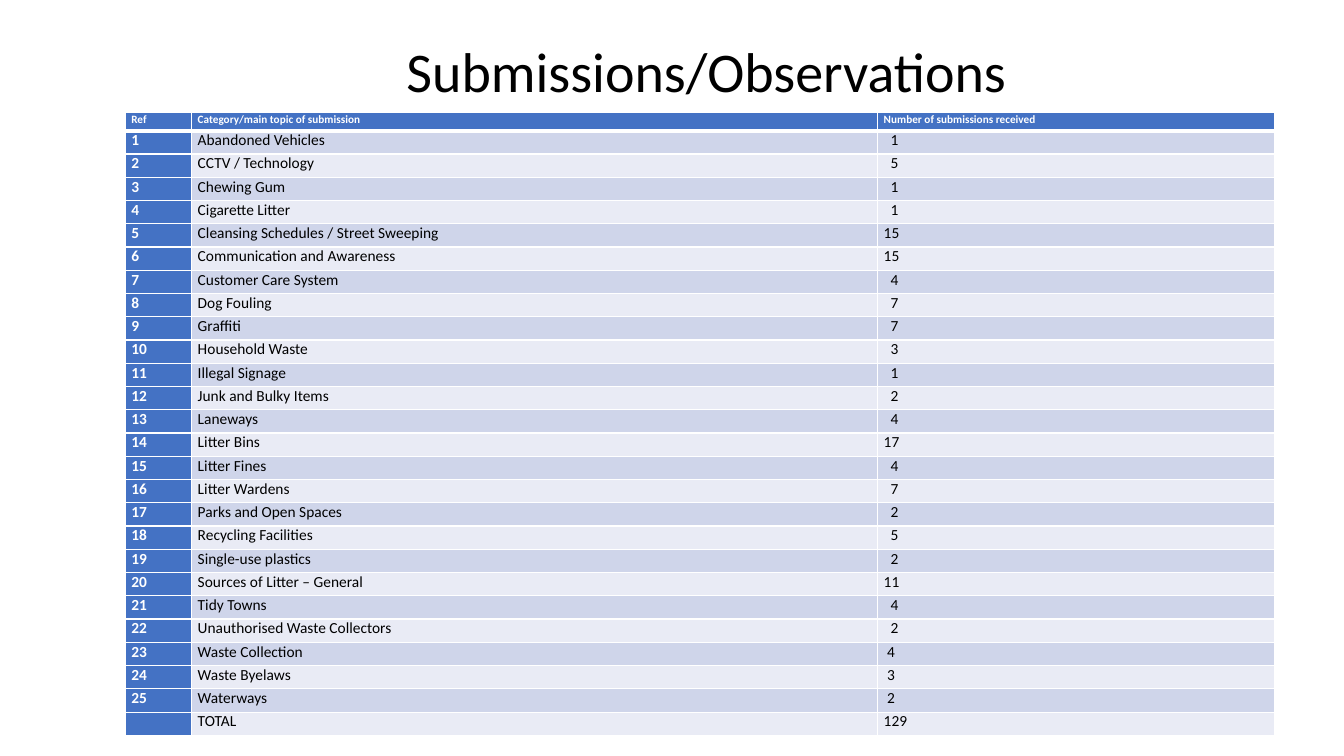
from lxml.etree import SubElement
from pptx import Presentation
from pptx.dml.color import RGBColor
from pptx.enum.text import PP_ALIGN as Align
from pptx.oxml.ns import qn
from pptx.util import Pt

FONT = "Calibri"
BLUE, WHITE, BLACK = "4472C4", "FFFFFF", "000000"
BANDS = ("CFD5EA", "E9EBF5")
HEADINGS = ("Ref", "Category/main topic of submission", "Number of submissions received")
SUBMISSIONS = [
    ("Abandoned Vehicles", 1), ("CCTV / Technology", 5), ("Chewing Gum", 1),
    ("Cigarette Litter", 1), ("Cleansing Schedules / Street Sweeping", 15),
    ("Communication and Awareness", 15), ("Customer Care System", 4),
    ("Dog Fouling", 7), ("Graffiti", 7), ("Household Waste", 3),
    ("Illegal Signage", 1), ("Junk and Bulky Items", 2), ("Laneways", 4),
    ("Litter Bins", 17), ("Litter Fines", 4), ("Litter Wardens", 7),
    ("Parks and Open Spaces", 2), ("Recycling Facilities", 5),
    ("Single-use plastics", 2), ("Sources of Litter – General", 11),
    ("Tidy Towns", 4), ("Unauthorised Waste Collectors", 2),
    ("Waste Collection", 4), ("Waste Byelaws", 3), ("Waterways", 2),
]
COLUMN_WIDTHS = (47.5, 490, 283.5)
HEADER_HEIGHT = 13
DIGIT_INDENT, NARROW_INDENT = 5, 2.5
FIRST_NARROW_REF = 23


def color(hex_string):
    return RGBColor.from_string(hex_string)


def set_font(paragraph, size, hex_string, bold=False):
    font = paragraph.font
    font.name, font.size, font.bold = FONT, Pt(size), bold
    font.color.rgb = color(hex_string)


def add_title(slide, left, top, width, height):
    shape = slide.shapes.add_textbox(Pt(left), Pt(top), Pt(width), Pt(height))
    frame = shape.text_frame
    frame.word_wrap = True
    frame.margin_top, frame.margin_bottom = Pt(11.2), Pt(5.8)
    frame.margin_left = Pt(18)
    paragraph = frame.paragraphs[0]
    paragraph.text = "Submissions/Observations"
    paragraph.alignment = Align.CENTER
    set_font(paragraph, 40, BLACK)


def add_borders(cell, bottom_width):
    """Draw white cell borders; call before the fill, which must follow them."""
    properties = cell._tc.get_or_add_tcPr()
    for side, width in (("L", 1), ("R", 1), ("T", 1), ("B", bottom_width)):
        line = SubElement(properties, qn(f"a:ln{side}"), w=str(Pt(width)))
        fill = SubElement(line, qn("a:solidFill"))
        SubElement(fill, qn("a:srgbClr"), val=WHITE)


def fill_cell(cell, text, fill, size, font_color, bold, indent=0, bottom_width=1):
    add_borders(cell, bottom_width)
    cell.fill.solid()
    cell.fill.fore_color.rgb = color(fill)
    cell.margin_left = cell.margin_right = Pt(4.5)
    cell.margin_top = cell.margin_bottom = 0
    paragraph = cell.text_frame.paragraphs[0]
    paragraph.text = text
    set_font(paragraph, size, font_color, bold)
    if indent:
        paragraph._p.get_or_add_pPr().set("marL", str(Pt(indent)))


def count_indent(ref, count):
    if count >= 10:
        return 0
    return NARROW_INDENT if ref >= FIRST_NARROW_REF else DIGIT_INDENT


def add_submissions_table(slide, left, top, width, height):
    total = sum(count for _, count in SUBMISSIONS)
    body = SUBMISSIONS + [("TOTAL", total)]
    table = slide.shapes.add_table(len(body) + 1, len(HEADINGS), Pt(left), Pt(top),
                                   Pt(width), Pt(height)).table
    table.first_row = table.horz_banding = False
    for column, column_width in zip(table.columns, COLUMN_WIDTHS):
        column.width = Pt(column_width)
    for row in table.rows:
        row.height = Pt((height - HEADER_HEIGHT) / len(body))
    table.rows[0].height = Pt(HEADER_HEIGHT)

    for index, heading in enumerate(HEADINGS):
        fill_cell(table.cell(0, index), heading, BLUE, 8, WHITE, True, bottom_width=3)
    for ref, (category, count) in enumerate(body, start=1):
        band = BANDS[(ref - 1) % 2]
        label = str(ref) if ref <= len(SUBMISSIONS) else ""
        fill_cell(table.cell(ref, 0), label, BLUE, 11, WHITE, True)
        fill_cell(table.cell(ref, 1), category, band, 11, BLACK, False)
        fill_cell(table.cell(ref, 2), str(count), band, 11, BLACK, False,
                  count_indent(ref, count))


def main():
    presentation = Presentation()
    presentation.slide_width, presentation.slide_height = Pt(960), Pt(540)
    slide = presentation.slides.add_slide(presentation.slide_layouts[6])
    add_title(slide, 157, 15, 684, 65.8)
    add_submissions_table(slide, 89.3, 80.4, sum(COLUMN_WIDTHS), 445)
    presentation.save("out.pptx")


if __name__ == "__main__":
    main()
